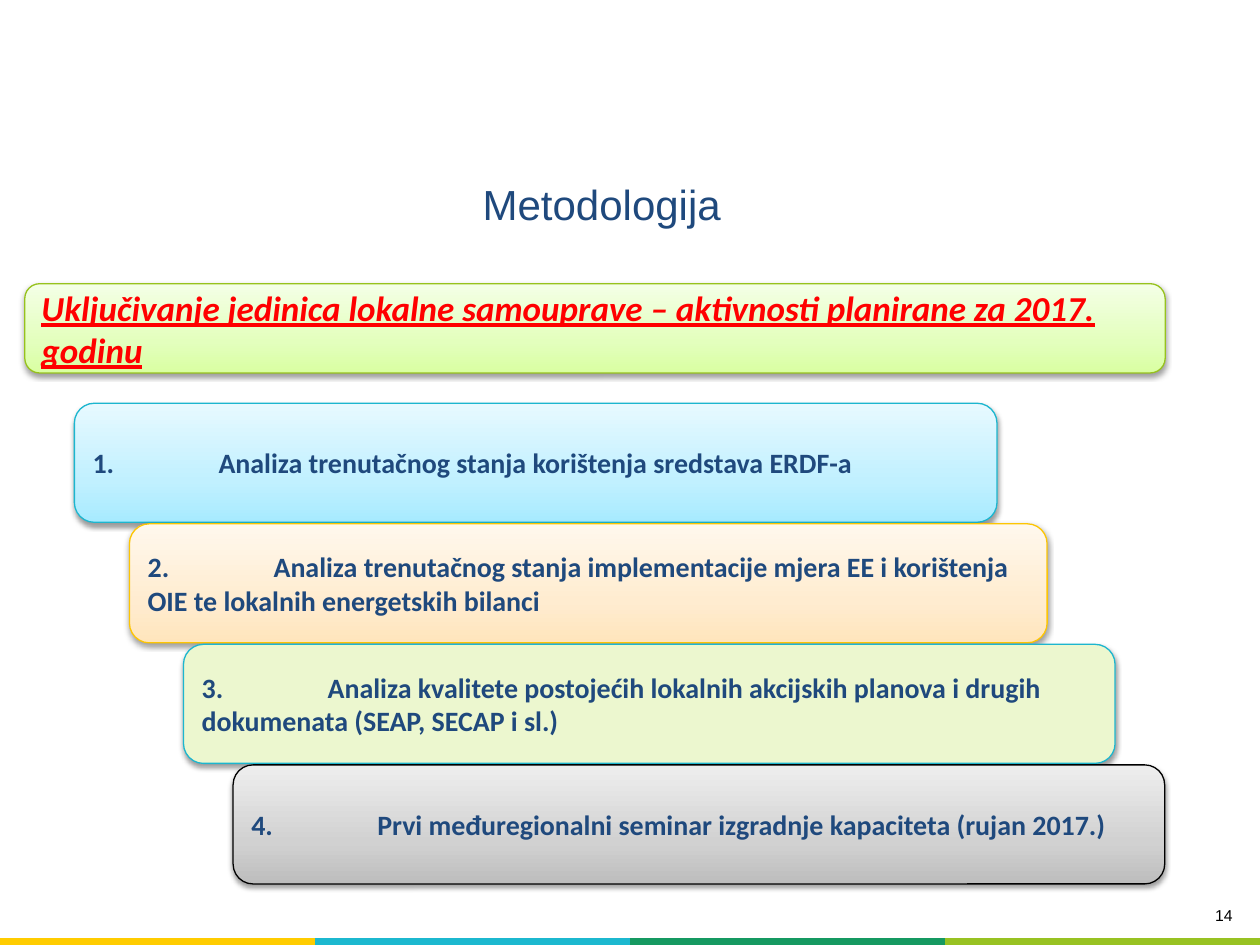
from lxml import etree
from pptx import Presentation
from pptx.dml.color import RGBColor
from pptx.enum import shapes, text
from pptx.oxml import parse_xml
from pptx.oxml.ns import nsdecls, qn
from pptx.util import Cm, Pt

NAVY = RGBColor(0x1F, 0x49, 0x7D)
RED = RGBColor(0xFF, 0x00, 0x00)
BLACK = RGBColor(0x00, 0x00, 0x00)
YELLOW = RGBColor(0xFF, 0xCC, 0x00)
CYAN = RGBColor(0x1C, 0xB8, 0xCF)
GREEN = RGBColor(0x15, 0x99, 0x61)
LIME = RGBColor(0x98, 0xC2, 0x22)
LIME_EDGE = RGBColor(0x97, 0xC2, 0x1D)
CYAN_EDGE = RGBColor(0x1C, 0xB6, 0xCF)
GOLD_EDGE = RGBColor(0xFD, 0xC5, 0x03)
PALE_GREEN = RGBColor(0xEC, 0xF7, 0xCF)
LIME_FADE = [RGBColor(0xD9, 0xFF, 0xA2), RGBColor(0xE3, 0xFF, 0xBD), RGBColor(0xF4, 0xFF, 0xE6)]
BLUE_FADE = [RGBColor(0xA7, 0xEB, 0xFF), RGBColor(0xC1, 0xF0, 0xFF), RGBColor(0xE7, 0xF9, 0xFF)]
ORANGE_FADE = [RGBColor(0xFF, 0xE5, 0xBC), RGBColor(0xFF, 0xEC, 0xD0), RGBColor(0xFF, 0xF8, 0xED)]
GREY_FADE = [RGBColor(0xBD, 0xBD, 0xBD), RGBColor(0xD1, 0xD1, 0xD1), RGBColor(0xEE, 0xEE, 0xEE)]


def write(frame, wording, font_name, size, color, align, anchor):
    frame.word_wrap = True
    frame.vertical_anchor = anchor
    paragraph = frame.paragraphs[0]
    paragraph.text = wording
    paragraph.alignment = align
    if "\t" in wording:
        tabs = etree.SubElement(paragraph._p.get_or_add_pPr(), qn("a:tabLst"))
        etree.SubElement(tabs, qn("a:tab"), pos=str(Cm(2.54)), algn="l")
    paragraph.font.name = font_name
    paragraph.font.size = Pt(size)
    paragraph.font.color.rgb = color
    return paragraph


def add_panel(left, top, width, height, colors, edge, wording, size, color):
    panel = slide.shapes.add_shape(
        shapes.MSO_SHAPE.ROUNDED_RECTANGLE, Cm(left), Cm(top), Cm(width), Cm(height))
    if len(colors) == 1:
        panel.fill.solid()
        panel.fill.fore_color.rgb = colors[0]
    else:
        panel.fill.gradient()
        panel.fill.gradient_angle = 90
        stops = panel._element.spPr.find(qn("a:gradFill")).find(qn("a:gsLst"))
        for stop in list(stops):
            stops.remove(stop)
        for position, shade in zip((0, 35, 100), colors):
            stop = etree.SubElement(stops, qn("a:gs"), pos=str(position * 1000))
            etree.SubElement(stop, qn("a:srgbClr"), val=str(shade))
    panel.line.color.rgb = edge
    panel.line.width = Pt(0.75)
    panel.shadow.inherit = False
    panel._element.spPr.find(qn("a:effectLst")).append(parse_xml(
        f'<a:outerShdw {nsdecls("a")} blurRad="40000" dist="20000" dir="5400000" rotWithShape="0">'
        '<a:srgbClr val="000000"><a:alpha val="38000"/></a:srgbClr></a:outerShdw>'))
    paragraph = write(panel.text_frame, wording, "Calibri", size, color,
                      text.PP_ALIGN.LEFT, text.MSO_ANCHOR.MIDDLE)
    paragraph.font.bold = True
    return paragraph


deck = Presentation()
deck.slide_width, deck.slide_height = Cm(25.4), Cm(19.05)
slide = deck.slides.add_slide(deck.slide_layouts[6])

stripe = slide.shapes.add_table(1, 4, Cm(0), Cm(18.9), Cm(25.4), Cm(0.43)).table
for cell, color in zip(stripe.rows[0].cells, (YELLOW, CYAN, GREEN, LIME)):
    for side in ("lnL", "lnR", "lnT", "lnB"):
        border = etree.SubElement(cell._tc.get_or_add_tcPr(), qn(f"a:{side}"), w="0")
        etree.SubElement(border, qn("a:noFill"))
    cell.fill.solid()
    cell.fill.fore_color.rgb = color

page_number = slide.shapes.add_textbox(Cm(20.1), Cm(18.14), Cm(5), Cm(0.79))
write(page_number.text_frame, "14", "Arial", 9, BLACK,
      text.PP_ALIGN.RIGHT, text.MSO_ANCHOR.TOP)

title = slide.shapes.add_textbox(Cm(0.7), Cm(3.33), Cm(22.86), Cm(1.55))
write(title.text_frame, "Metodologija", "Arial", 24, NAVY,
      text.PP_ALIGN.CENTER, text.MSO_ANCHOR.MIDDLE)

heading = add_panel(
    0.5, 5.72, 22.99, 1.8, LIME_FADE, LIME_EDGE,
    "Uključivanje jedinica lokalne samouprave – aktivnosti planirane za 2017. godinu", 20, RED)
heading.font.italic = True
heading.font.underline = True

steps = [
    (1.5, 18.6, BLUE_FADE, CYAN_EDGE,
     "Analiza trenutačnog stanja korištenja sredstava ERDF-a"),
    (2.61, 18.5, ORANGE_FADE, GOLD_EDGE,
     "Analiza trenutačnog stanja implementacije mjera EE i korištenja OIE "
     "te lokalnih energetskih bilanci"),
    (3.7, 18.78, [PALE_GREEN], CYAN_EDGE,
     "Analiza kvalitete postojećih lokalnih akcijskih planova i drugih dokumenata "
     "(SEAP, SECAP i sl.)"),
    (4.7, 18.78, GREY_FADE, BLACK,
     "Prvi međuregionalni seminar izgradnje kapaciteta (rujan 2017.)"),
]
for index, (left, width, colors, edge, activity) in enumerate(steps):
    add_panel(left, 8.13 + 2.43 * index, width, 2.4, colors, edge,
              f"{index + 1}.\t{activity}", 16, NAVY)

deck.save("out.pptx")
